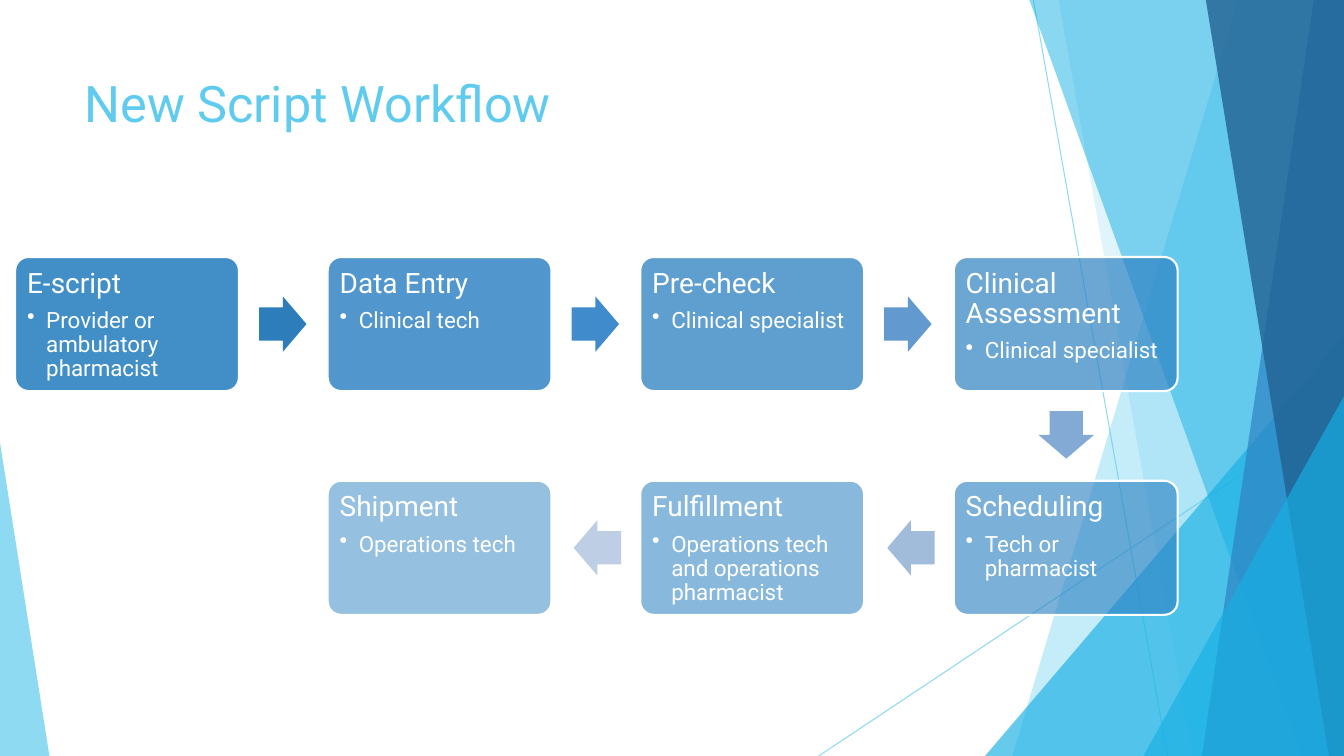
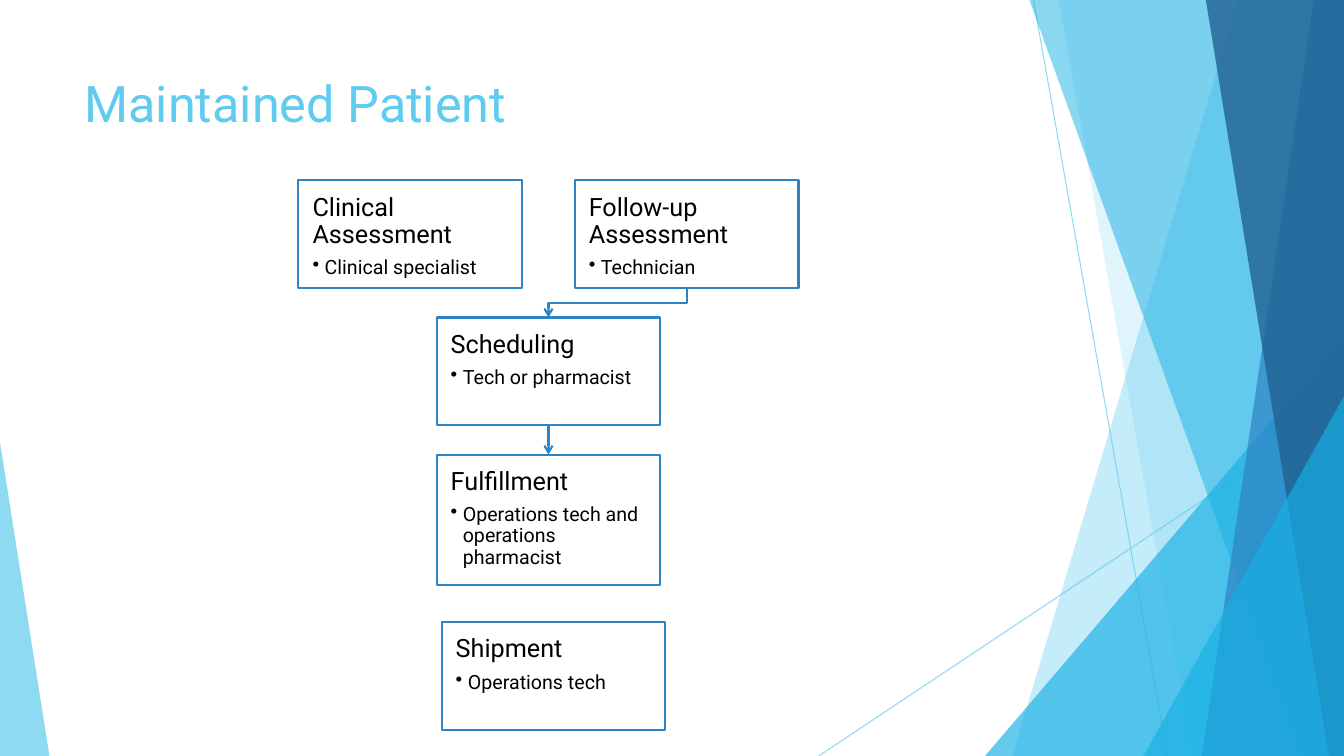
from lxml.etree import SubElement
from pptx import Presentation
from pptx.dml.color import RGBColor
from pptx.enum.shapes import MSO_CONNECTOR as Connector, MSO_SHAPE as Preset
from pptx.enum.text import MSO_ANCHOR as Anchor, PP_ALIGN as Align
from pptx.oxml.ns import qn
from pptx.util import Pt

PX = 9144  # EMU; 100 px to the inch
WIDTH, HEIGHT = 1333, 750
FONT = "Roboto"
COLORS = {
    "sky": "5FCBEF", "cyan": "17B0E4", "blue": "2E83C3", "navy": "226292",
    "white": "FFFFFF", "black": "000000",
}


def paint(shape, fill, color, alpha=100):
    """Give a shape's fill, or a connector's line, a flat colour without shadow."""
    fill.solid()
    fill.fore_color.rgb = RGBColor.from_string(color)
    properties = shape.element.spPr
    if alpha < 100:
        color_node = next(properties.iter(qn("a:srgbClr")))
        SubElement(color_node, qn("a:alpha"), val=str(alpha * 1000))
    SubElement(properties, qn("a:effectLst"))


def write_step(shape, heading, role, sizes, color, inset, indent):
    """Write a heading with one bulleted line below it."""
    frame = shape.text_frame
    frame.word_wrap = True
    frame.vertical_anchor = Anchor.TOP
    frame.margin_left = frame.margin_right = inset * PX
    frame.margin_top = frame.margin_bottom = inset * PX
    frame.text = f"{heading}\n{role}"
    for paragraph, size, gap in zip(frame.paragraphs, sizes, (0.35, 0.15)):
        paragraph.alignment = Align.LEFT
        paragraph.line_spacing = 0.9
        paragraph.space_after = Pt(round(size * gap, 1))
        paragraph.font.size = Pt(size)
        paragraph.font.name = FONT
        paragraph.font.color.rgb = RGBColor.from_string(color)
    bullet = frame.paragraphs[1]._p.get_or_add_pPr()
    bullet.set("marL", str(indent * PX))
    bullet.set("indent", str(-indent * PX))
    SubElement(bullet, qn("a:buChar"), char="•")
    # The run-defaults element must come last
    bullet.append(bullet.find(qn("a:defRPr")))
    for paragraph, size in zip(frame.paragraphs, sizes):
        font = paragraph.runs[0].font
        font.size = Pt(size)
        font.name = FONT
        font.color.rgb = RGBColor.from_string(color)


presentation = Presentation()
presentation.slide_width = WIDTH * PX
presentation.slide_height = HEIGHT * PX

# Shared backdrop and title
hairlines = [(1025, 0, 1158, 750), (1333, 403, 812, 750)]
# Bands: top x, bottom x, both reaching the right edge
# Triangles: left, top, width, apex position
facets = [
    ("band", (1228, 1004), "sky", 36),
    ("band", (1050, 1183), "sky", 20),
    ("triangle", (977, 333, 356, 1), "cyan", 66),
    ("band", (1021, 1291), "cyan", 50),
    ("band", (1303, 1192), "blue", 70),
    ("band", (1196, 1318), "navy", 80),
    ("triangle", (1134, 393, 199, 1), "cyan", 66),
    ("triangle", (0, 439, 49, 0), "sky", 70),
]
slides = []
for title in ("New Script Workflow", "Maintained Patient"):
    slide = presentation.slides.add_slide(presentation.slide_layouts[6])
    slides.append(slide)
    for ends in hairlines:
        line = slide.shapes.add_connector(Connector.STRAIGHT, *(v * PX for v in ends))
        line.line.width = Pt(0.75)
        paint(line, line.line.fill, COLORS["sky"], 70)
    for kind, geometry, color, alpha in facets:
        if kind == "band":
            top_x, bottom_x = geometry
            builder = slide.shapes.build_freeform(top_x, 0, scale=PX)
            builder.add_line_segments([(WIDTH, 0), (WIDTH, HEIGHT), (bottom_x, HEIGHT)])
            facet = builder.convert_to_shape()
        else:
            left, top, width, apex = geometry
            facet = slide.shapes.add_shape(
                Preset.ISOSCELES_TRIANGLE,
                left * PX, top * PX, width * PX, (HEIGHT - top) * PX)
            facet.adjustments[0] = apex
        paint(facet, facet.fill, COLORS[color], alpha)
        facet.line.fill.background()
    title_box = slide.shapes.add_textbox(74 * PX, 67 * PX, 940 * PX, 144 * PX)
    title_box.text_frame.word_wrap = True
    title_box.text_frame.text = title
    font = title_box.text_frame.paragraphs[0].runs[0].font
    font.size = Pt(36)
    font.name = FONT
    font.color.rgb = RGBColor.from_string(COLORS["sky"])

workflow_slide, patient_slide = slides

# New script workflow: four steps to the right, one down, then back to the left
# Column, row, heading, role, direction and colour of the arrow that follows
workflow = [
    (0, 0, "E-script", "Provider or ambulatory pharmacist", "right", "2C7DBA"),
    (1, 0, "Data Entry", "Clinical tech", "right", "408BCC"),
    (2, 0, "Pre-check", "Clinical specialist", "right", "629ACF"),
    (3, 0, "Clinical Assessment", "Clinical specialist", "down", "83AAD4"),
    (3, 1, "Scheduling", "Tech or pharmacist", "left", "A1BBDB"),
    (2, 1, "Fulfillment", "Operations tech and operations pharmacist", "left", "BECEE4"),
    (1, 1, "Shipment", "Operations tech", None, None),
]
# Offset from the step's corner, and rotation
arrow_places = {"right": (242, 39, 0), "down": (88, 149, 90), "left": (-66, 39, 180)}
for index, (column, row, heading, role, direction, arrow_color) in enumerate(workflow):
    left, top = 15 + column * 931 // 3, 255 + row * 222
    step = workflow_slide.shapes.add_shape(
        Preset.ROUNDED_RECTANGLE, left * PX, top * PX, 222 * PX, 133 * PX)
    step.adjustments[0] = 0.1
    paint(step, step.fill, COLORS["blue"], round(90 - index * 40 / 6))
    step.line.color.rgb = RGBColor.from_string(COLORS["white"])
    step.line.width = Pt(1.5)
    write_step(step, heading, role, (20, 16), COLORS["white"], inset=8, indent=19)
    if direction:
        offset_x, offset_y, rotation = arrow_places[direction]
        arrow = workflow_slide.shapes.add_shape(
            Preset.RIGHT_ARROW,
            (left + offset_x) * PX, (top + offset_y) * PX, 47 * PX, 55 * PX)
        arrow.adjustments[0] = 0.6
        arrow.adjustments[1] = 0.5
        arrow.rotation = rotation
        paint(arrow, arrow.fill, arrow_color)
        arrow.line.fill.background()

# Maintained patient: left, top, height, heading, role
patient_steps = [
    (296, 179, 107, "Clinical Assessment", "Clinical specialist"),
    (570, 179, 107, "Follow-up Assessment", "Technician"),
    (433, 315, 107, "Scheduling", "Tech or pharmacist"),
    (433, 451, 129, "Fulfillment", "Operations tech and operations pharmacist"),
    (438, 617, 107, "Shipment", "Operations tech"),
]
boxes = {}
for left, top, height, heading, role in patient_steps:
    box = patient_slide.shapes.add_shape(
        Preset.RECTANGLE, left * PX, top * PX, 222 * PX, height * PX)
    paint(box, box.fill, COLORS["white"])
    box.line.color.rgb = RGBColor.from_string(COLORS["blue"])
    box.line.width = Pt(1.5)
    write_step(box, heading, role, (18, 14), COLORS["black"], inset=14, indent=12)
    boxes[heading] = box

# A quarter turn makes the elbow leave downwards: (681, 286) to (544, 315)
elbow = patient_slide.shapes.add_connector(
    Connector.ELBOW, 598 * PX, 232 * PX, 627 * PX, 369 * PX)
elbow.element.spPr.find(qn("a:xfrm")).set("rot", str(90 * 60000))
straight = patient_slide.shapes.add_connector(Connector.STRAIGHT, 0, 0, 0, 0)
straight.begin_connect(boxes["Scheduling"], 2)
straight.end_connect(boxes["Fulfillment"], 0)
for connector in (elbow, straight):
    connector.line.width = Pt(1.5)
    paint(connector, connector.line.fill, COLORS["blue"])
    SubElement(connector.element.spPr.find(qn("a:ln")), qn("a:tailEnd"), type="arrow")

presentation.save("out.pptx")
